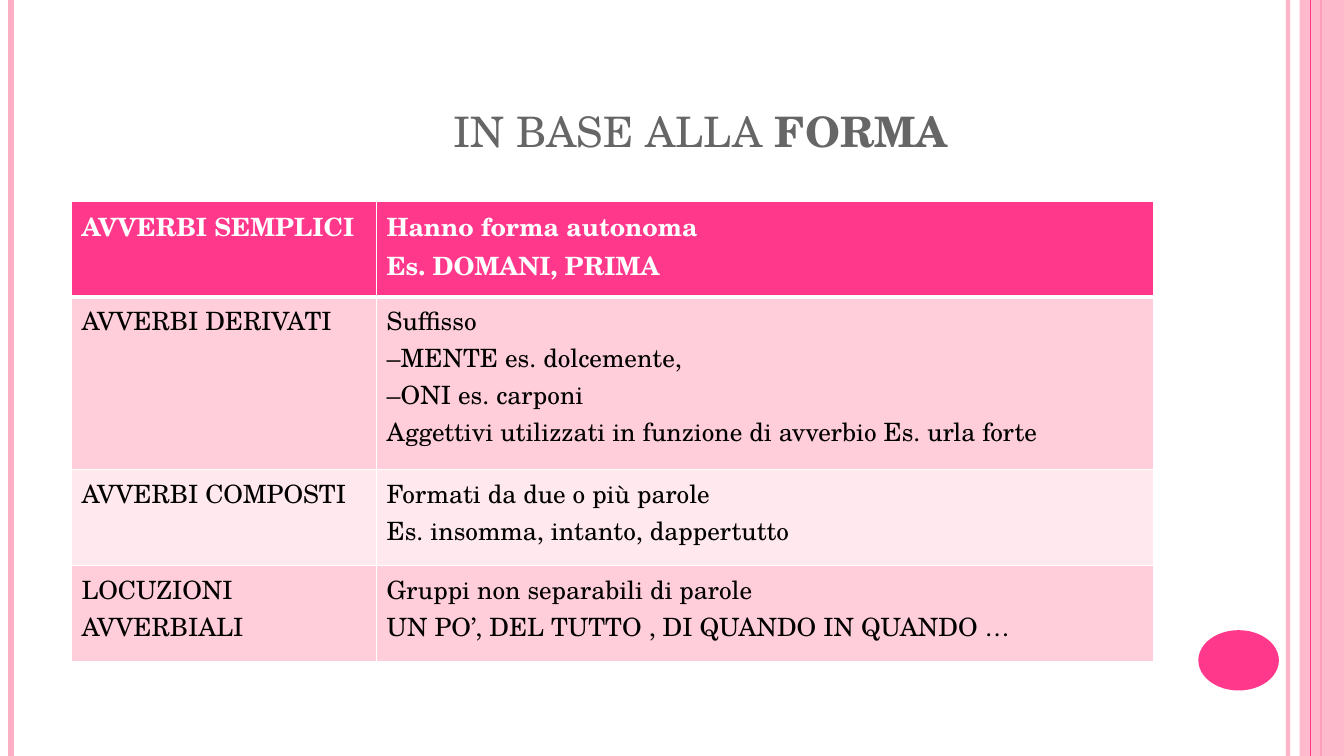
import pptx
import pptx.util
import pptx.dml.color
import pptx.enum.shapes
import pptx.enum.text
import pptx.oxml
import pptx.oxml.ns
from lxml import etree

Cm = pptx.util.Cm
Pt = pptx.util.Pt
RGBColor = pptx.dml.color.RGBColor
qn = pptx.oxml.ns.qn

FONT = "TeX Gyre Schola"
MAGENTA = RGBColor(0xFF, 0x38, 0x8C)
PINK = RGBColor(0xFF, 0xAF, 0xC5)
ROSE = RGBColor(0xFF, 0xCE, 0xDA)
BLUSH = RGBColor(0xFF, 0xE8, 0xEE)
GREY = RGBColor(0x66, 0x66, 0x66)
BLACK = RGBColor(0, 0, 0)
WHITE = RGBColor(0xFF, 0xFF, 0xFF)

TITLE = [("IN BASE ALLA ", False), ("FORMA", True)]
ROWS = [
    ("AVVERBI SEMPLICI", ["Hanno forma autonoma", "Es. DOMANI, PRIMA"]),
    ("AVVERBI DERIVATI", [
        "Suffisso",
        "–MENTE es. dolcemente,",
        "–ONI es. carponi",
        "Aggettivi utilizzati in funzione di avverbio Es. urla forte",
    ]),
    ("AVVERBI COMPOSTI", ["Formati da due o più parole", "Es. insomma, intanto, dappertutto"]),
    ("LOCUZIONI AVVERBIALI", [
        "Gruppi non separabili di parole",
        "UN PO’, DEL TUTTO , DI QUANDO IN QUANDO …",
    ]),
]
COL_WIDTHS = [7.69, 19.57]
ROW_HEIGHTS = [2.41, 4.35, 2.41, 2.41]
WIDTH, HEIGHT = 33.87, 19.05
BACK_LINES = [(32.46, PINK, 3, 93), (0.28, PINK, 4.5, 100), (33.3, MAGENTA, 1.5, 100)]
FRONT_LINES = [(33.02, MAGENTA, 0.75, 100)]

prs = pptx.Presentation()
prs.slide_width, prs.slide_height = Cm(WIDTH), Cm(HEIGHT)
s = prs.slides.add_slide(prs.slide_layouts[6])


def add_text(p, text, size=18, color=BLACK, bold=False):
    r = p.add_run()
    r.text = text
    r.font.name = FONT
    r.font.size = Pt(size)
    r.font.bold = bold
    r.font.color.rgb = color


def set_alpha(element, percent):
    clr = next(element.iter(qn("a:srgbClr")))
    etree.SubElement(clr, qn("a:alpha")).set("val", str(percent * 1000))


def add_lines(lines):
    for x, color, width, opacity in lines:
        c = s.shapes.add_connector(
            pptx.enum.shapes.MSO_CONNECTOR.STRAIGHT, Cm(x), 0, Cm(x), Cm(HEIGHT))
        c.line.color.rgb = color
        c.line.width = Pt(width)
        if opacity < 100:
            set_alpha(c.line._ln, opacity)
        etree.SubElement(c._element.spPr, qn("a:effectLst"))


def add_shape(kind, color, x, y, w, h):
    sp = s.shapes.add_shape(kind, Cm(x), Cm(y), Cm(w), Cm(h))
    sp.shadow.inherit = False
    sp.fill.solid()
    sp.fill.fore_color.rgb = color
    sp.line.fill.background()
    return sp


def set_borders(cell, bottom):
    tcPr = cell._tc.get_or_add_tcPr()
    for side, width in (("L", 1), ("R", 1), ("T", 1), ("B", bottom)):
        ln = etree.SubElement(tcPr, qn("a:ln" + side), w=str(Pt(width)))
        fill = etree.SubElement(ln, qn("a:solidFill"))
        etree.SubElement(fill, qn("a:srgbClr"), val=str(WHITE))


add_lines(BACK_LINES)
band = add_shape(pptx.enum.shapes.MSO_SHAPE.RECTANGLE, PINK, 32.75, 0, 1.12, HEIGHT)
set_alpha(band._element.spPr, 87)
add_lines(FRONT_LINES)
add_shape(pptx.enum.shapes.MSO_SHAPE.OVAL, MAGENTA, 30.2, 15.88, 2.03, 1.52)

tf = s.shapes.add_textbox(Cm(1.7), Cm(0.76), Cm(27.66), Cm(3.18)).text_frame
tf.word_wrap = True
tf.vertical_anchor = pptx.enum.text.MSO_ANCHOR.BOTTOM
tf.margin_left = Cm(4.5)
tf.margin_bottom = 0
p = tf.paragraphs[0]
p.alignment = pptx.enum.text.PP_ALIGN.CENTER
for text, bold in TITLE:
    add_text(p, text, size=30, color=GREY, bold=bold)

table = s.shapes.add_table(
    len(ROWS), len(COL_WIDTHS), Cm(1.8), Cm(5.08),
    Cm(sum(COL_WIDTHS)), Cm(sum(ROW_HEIGHTS))).table
for column, width in zip(table.columns, COL_WIDTHS):
    column.width = Cm(width)
for i, (kind, details) in enumerate(ROWS):
    table.rows[i].height = Cm(ROW_HEIGHTS[i])
    header = i == 0
    fill = MAGENTA if header else (BLUSH, ROSE)[i % 2]
    for j, lines in enumerate(([kind], details)):
        cell = table.cell(i, j)
        set_borders(cell, 3 if header else 1)
        cell.fill.solid()
        cell.fill.fore_color.rgb = fill
        tf = cell.text_frame
        for n, line in enumerate(lines):
            p = tf.add_paragraph() if n else tf.paragraphs[0]
            add_text(p, line, color=WHITE if header else BLACK, bold=header)

prs.save("out.pptx")
